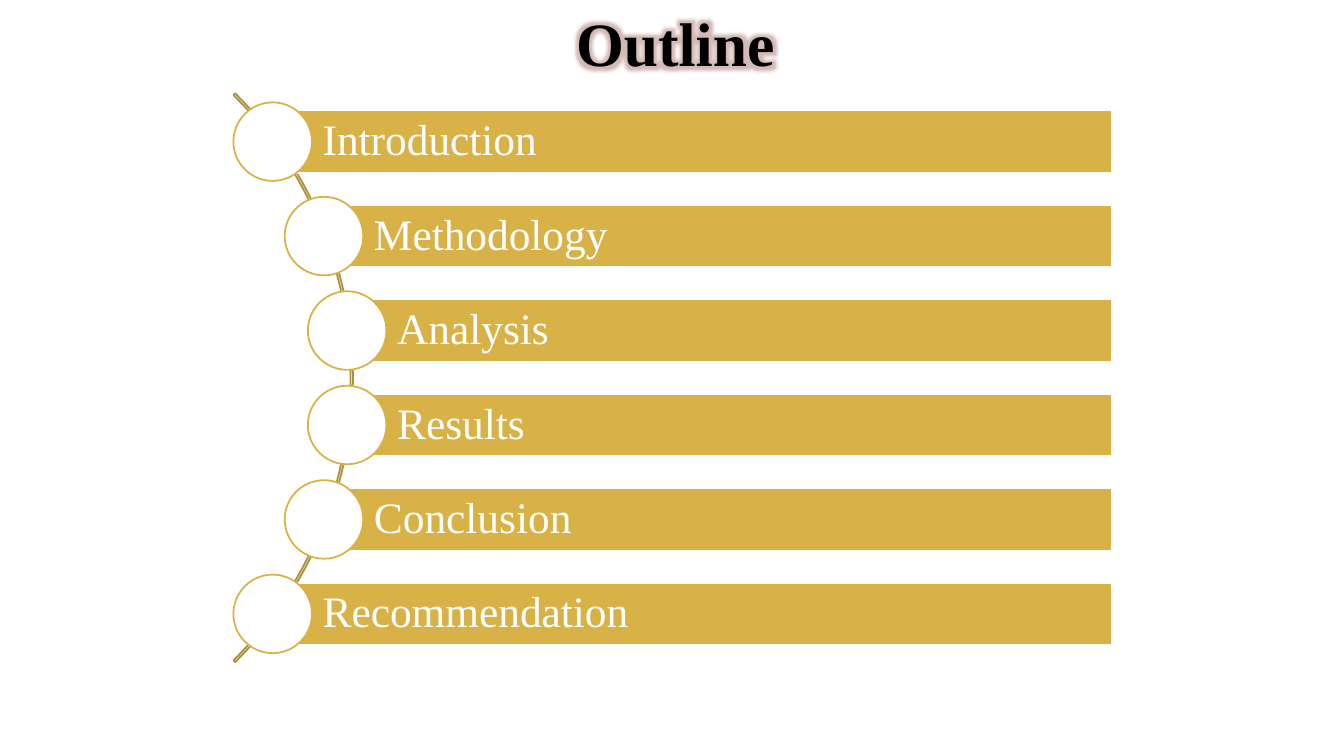
from math import sqrt

from lxml.etree import SubElement
from pptx import Presentation
from pptx.dml.color import RGBColor
from pptx.enum.shapes import MSO_SHAPE
from pptx.enum.text import MSO_ANCHOR, PP_ALIGN
from pptx.oxml.ns import qn
from pptx.util import Cm, Pt

TOPICS = ["Introduction", "Methodology", "Analysis", "Results", "Conclusion", "Recommendation"]
GOLD, DARK_GOLD, WHITE, BLACK, GLOW = "D9B247", "AE8F39", "FFFFFF", "000000", "935246"
FONT = "Times New Roman"

# Curve geometry in cm: circles sit on a circle around (CURVE_X, CURVE_Y)
CURVE_X, CURVE_Y = -1.24, 9.52
ARC_SIZE, RING_RADIUS = 20.27, 10.06
PITCH, BAR_HEIGHT, BAR_RIGHT, DISC_SIZE = 2.38, 1.57, 28.02, 1.98


def color(value):
    return RGBColor.from_string(value)


def add_outlined(slide, kind, left, top, width, height, fill, line):
    shape = slide.shapes.add_shape(kind, Cm(left), Cm(top), Cm(width), Cm(height))
    shape.shadow.inherit = False
    if fill:
        shape.fill.solid()
        shape.fill.fore_color.rgb = color(fill)
    else:
        shape.fill.background()
    shape.line.color.rgb = color(line)
    shape.line.width = Pt(1.25)
    return shape


def write(frame, text, text_color, frame_format, font_format, align):
    for name, value in frame_format.items():
        setattr(frame, name, value)
    paragraph = frame.paragraphs[0]
    paragraph.alignment = align
    run = paragraph.add_run()
    run.text = text
    run.font.color.rgb = color(text_color)
    for name, value in font_format.items():
        setattr(run.font, name, value)
    return run


def add_solid(parent, value, alpha=None):
    tint = SubElement(parent, qn("a:srgbClr"), val=value)
    if alpha:
        SubElement(tint, qn("a:alpha"), val=str(alpha))


def add_title(slide):
    heading = slide.shapes.add_textbox(Cm(0.28), 0, Cm(33.87), Cm(2.14))
    run = write(heading.text_frame, "Outline ", BLACK, {"word_wrap": True},
                {"name": FONT, "size": Pt(44), "bold": True}, PP_ALIGN.CENTER)
    # White letter outline, then the soft glow, in schema order
    properties = run.font.fill._xPr
    outline = properties.makeelement(qn("a:ln"), {"w": "9525"})
    properties.insert(0, outline)
    add_solid(SubElement(outline, qn("a:solidFill")), WHITE)
    effects = properties.makeelement(qn("a:effectLst"), {})
    properties.find(qn("a:solidFill")).addnext(effects)
    add_solid(SubElement(effects, qn("a:glow"), rad="139700"), GLOW, 40000)


def add_curve(slide):
    half = ARC_SIZE / 2
    curve = add_outlined(slide, MSO_SHAPE.BLOCK_ARC, CURVE_X - half, CURVE_Y - half,
                         ARC_SIZE, ARC_SIZE, None, DARK_GOLD)
    for index, value in enumerate((189, 27, 0.003)):
        curve.adjustments[index] = value


def add_topic(slide, topic, offset):
    x = CURVE_X + sqrt(RING_RADIUS ** 2 - offset ** 2)
    y = CURVE_Y + offset
    bar = add_outlined(slide, MSO_SHAPE.RECTANGLE, x, y - BAR_HEIGHT / 2,
                       BAR_RIGHT - x, BAR_HEIGHT, GOLD, WHITE)
    write(bar.text_frame, topic, WHITE,
          {"word_wrap": True, "vertical_anchor": MSO_ANCHOR.MIDDLE, "margin_left": Cm(1.26),
           "margin_right": Cm(0.22), "margin_top": Cm(0.22), "margin_bottom": Cm(0.22)},
          {"name": FONT, "size": Pt(31)}, PP_ALIGN.LEFT)
    bar.text_frame.paragraphs[0].line_spacing = 0.9
    add_outlined(slide, MSO_SHAPE.OVAL, x - DISC_SIZE / 2, y - DISC_SIZE / 2,
                 DISC_SIZE, DISC_SIZE, WHITE, GOLD)


def main():
    deck = Presentation()
    deck.slide_width, deck.slide_height = Cm(33.87), Cm(19.05)
    slide = deck.slides.add_slide(deck.slide_layouts[6])

    # Curved list, evenly spaced around the middle of the arc
    add_curve(slide)
    for index, topic in enumerate(TOPICS):
        add_topic(slide, topic, (index - (len(TOPICS) - 1) / 2) * PITCH)

    # Heading
    add_title(slide)
    deck.save("out.pptx")


if __name__ == "__main__":
    main()
